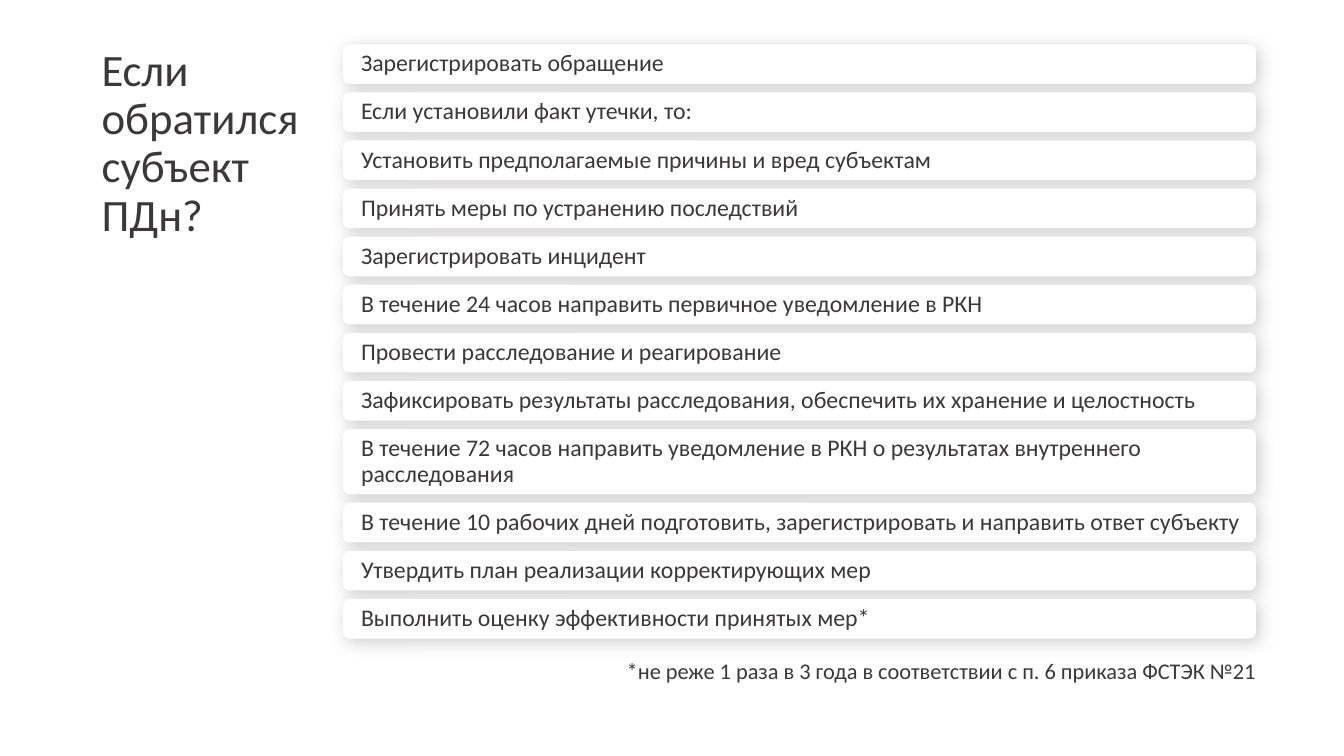
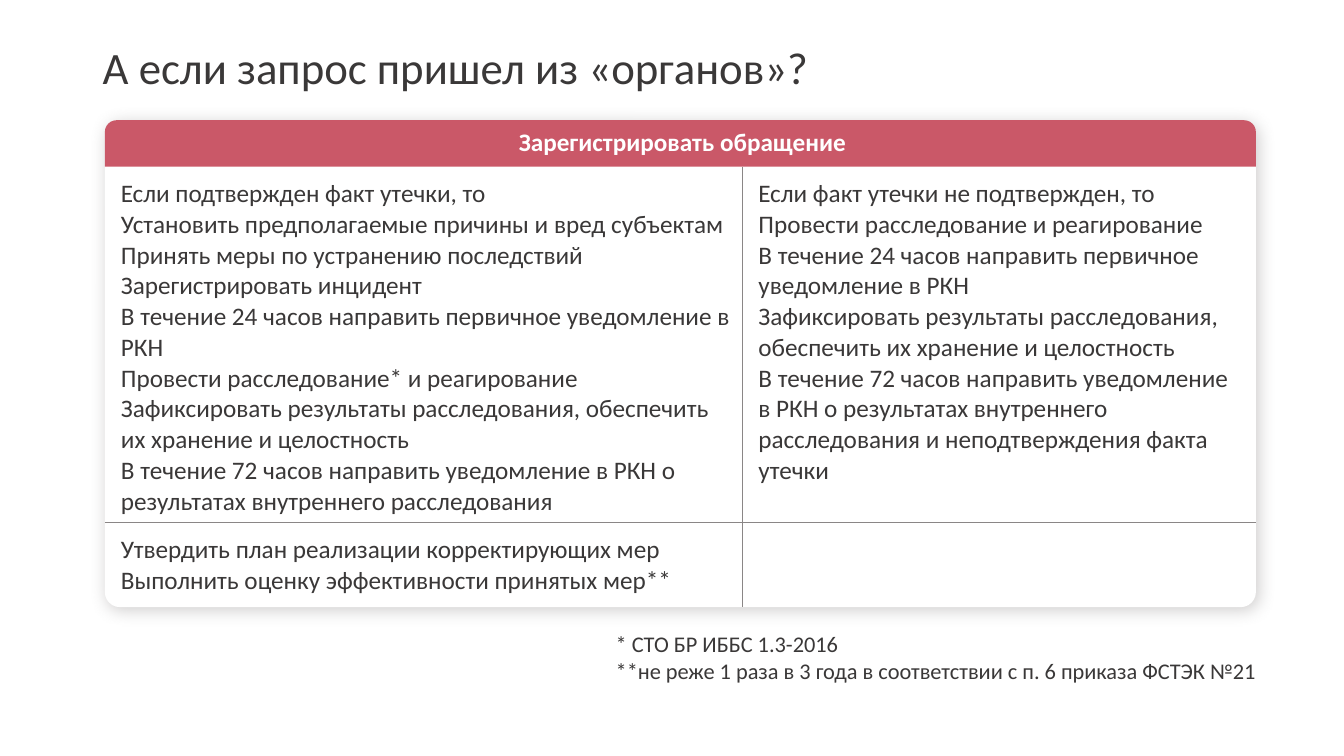
from lxml import etree
from pptx import Presentation
from pptx.dml import color
from pptx.enum import shapes, text
from pptx.oxml import ns
from pptx.util import Pt

DARK, WHITE, GREY, RED = "3A3838", "FFFFFF", "8A8686", "CA5868"
RIGHT = 897.1  # right edge of the content
FORM = shapes.MSO_SHAPE
MID, TOP = text.MSO_ANCHOR.MIDDLE, text.MSO_ANCHOR.TOP
PLAIN = "{2D5ABB26-0587-4C30-8999-92F81FD0307C}"  # no style, no grid


def rgb(hex_):
    return color.RGBColor.from_string(hex_)


def add(parent, tag, **attrs):
    node = etree.SubElement(parent, ns.qn(tag))
    for key, val in attrs.items():
        node.set(key, str(val))
    return node


class Deck:
    font = "Calibri"

    def __init__(self):
        self.prs = Presentation()
        self.prs.slide_width, self.prs.slide_height = Pt(960), Pt(540)
        self.slide = None

    def page(self):
        self.slide = self.prs.slides.add_slide(self.prs.slide_layouts[5])

    def label(self, frame, lines, size, hue=DARK, bold=False, align="LEFT", lead=None):
        frame.text = "\n".join(lines)
        for para in frame.paragraphs:
            para.alignment = text.PP_ALIGN[align]
            if lead:
                para.line_spacing = lead
            for run in para.runs:
                run.font.name, run.font.size = self.font, Pt(size)
                run.font.bold, run.font.color.rgb = bold, rgb(hue)

    def inset(self, box, left, top, right, low):
        box.margin_left, box.margin_top = Pt(left), Pt(top)
        box.margin_right, box.margin_bottom = Pt(right), Pt(low)

    def title(self, words, left, top, wide, high, anchor, pad):
        item = self.slide.shapes.title
        item.left, item.top = Pt(left), Pt(top)
        item.width, item.height = Pt(wide), Pt(high)
        frame = item.text_frame
        frame.word_wrap, frame.auto_size = True, text.MSO_AUTO_SIZE.NONE
        frame.vertical_anchor = anchor
        self.inset(frame, *pad)
        self.label(frame, [words], 32, lead=0.9)

    def panel(self, form, left, top, wide, high, fill, curve, shade=True):
        item = self.slide.shapes.add_shape(form, Pt(left), Pt(top), Pt(wide), Pt(high))
        item.adjustments[0] = curve / high
        item.fill.solid()
        item.fill.fore_color.rgb = rgb(fill)
        item.line.fill.background()
        item.shadow.inherit = False
        if shade:
            glow = item._element.spPr.find(ns.qn("a:effectLst"))
            drop = add(glow, "a:outerShdw", blurRad=Pt(12), dist=Pt(3),
                       dir=45 * 60000, algn="tl", rotWithShape=0)
            add(add(drop, "a:srgbClr", val=GREY), "a:alpha", val=40000)
        return item

    def card(self, words, left, top, wide, high):
        item = self.panel(FORM.ROUNDED_RECTANGLE, left, top, wide, high, WHITE, 4.7)
        frame = item.text_frame
        frame.word_wrap, frame.vertical_anchor = True, MID
        self.inset(frame, 11.5, 5.8, 5.8, 5.8)
        self.label(frame, [words], 17, lead=0.9)

    def note(self, lines, left):
        high = 19.5 * len(lines) + 7.2
        item = self.slide.shapes.add_textbox(
            Pt(left), Pt(492.7 - high), Pt(910 - left), Pt(high))
        item.text_frame.word_wrap = False
        self.label(item.text_frame, lines, 16)

    def table(self, left, top, cols, rows):
        item = self.slide.shapes.add_table(
            len(rows), len(cols), Pt(left), Pt(top), Pt(sum(cols)), Pt(sum(rows)))
        grid = item.table
        grid.first_row = grid.horz_banding = False
        grid._tbl.tblPr.find(ns.qn("a:tableStyleId")).text = PLAIN
        for col, wide in zip(grid.columns, cols):
            col.width = Pt(wide)
        for row, high in zip(grid.rows, rows):
            row.height = Pt(high)
        return grid

    def cell(self, cell, lines, edges="", pad=(11.5, 8.6, 8.6, 5), **look):
        self.inset(cell, *pad)
        props = cell._tc.get_or_add_tcPr()
        for edge in edges.split():
            line = add(props, "a:" + edge, w=Pt(0.75))
            add(add(line, "a:solidFill"), "a:srgbClr", val=GREY)
        cell.fill.background()
        if lines:
            self.label(cell.text_frame, lines, 18, **look)


FOUND = "Установить предполагаемые причины и вред субъектам"
FIX = "Принять меры по устранению последствий"
LOG = "Зарегистрировать инцидент"
DAY = "В течение 24 часов направить первичное уведомление в РКН"
PROBE = "Провести расследование и реагирование"
KEEP = "Зафиксировать результаты расследования, обеспечить их хранение и целостность"
LATE = "В течение 72 часов направить уведомление в РКН о результатах внутреннего расследования"
PLAN = "Утвердить план реализации корректирующих мер"
RATE = "Выполнить оценку эффективности принятых мер*"
ENTER = "Зарегистрировать обращение"
RULE = "*не реже 1 раза в 3 года в соответствии с п. 6 приказа ФСТЭК №21"


def subject(deck):
    deck.page()
    deck.title("Если обратился субъект ПДн?", 62.6, 23.8, 165.6, 453.6, TOP, [10] * 4)

    # Stack of steps
    steps = [ENTER, "Если установили факт утечки, то:", FOUND, FIX, LOG, DAY, PROBE,
             KEEP, LATE,
             "В течение 10 рабочих дней подготовить, зарегистрировать и направить ответ субъекту",
             PLAN, RATE]
    left, top, gap = 245, 31.7, 6.05
    for step in steps:
        high = 46.6 if step == LATE else 28.3
        deck.card(step, left, top, RIGHT - left, high)
        top += high + gap
    deck.note([RULE], 440.6)


def organs(deck):
    deck.page()
    left, top = 74.9, 85.9
    cols, rows = [RIGHT - left - 366.8, 366.8], [33.1, 254.2, 60.5]

    # Card and red band behind the table
    deck.panel(FORM.ROUNDED_RECTANGLE, left, top, sum(cols), sum(rows), WHITE, 10.8)
    deck.title("А если запрос пришел из «органов»?", 66.2, 28.8, 828, 42.5, MID,
               (7.2, 3.6, 7.2, 3.6))
    deck.note(["* СТО БР ИББС 1.3-2016", "*" + RULE], 432.7)
    deck.panel(FORM.ROUND_2_SAME_RECTANGLE, left, top, sum(cols), rows[0], RED, 8.4,
               shade=False)

    # Table
    grid = deck.table(left, top, cols, rows)
    grid.cell(0, 0).merge(grid.cell(0, 1))
    deck.cell(grid.cell(0, 0), [ENTER], pad=(11.5, 5.5, 8.6, 5.5),
              hue=WHITE, bold=True, align="CENTER")
    deck.cell(grid.cell(0, 1), [])
    leak = ["Если подтвержден факт утечки, то", FOUND, FIX, LOG, DAY,
            "Провести расследование* и реагирование", KEEP, LATE]
    clear = ["Если факт утечки не подтвержден, то", PROBE, DAY, KEEP,
             LATE + " и неподтверждения факта утечки"]
    deck.cell(grid.cell(1, 0), leak, "lnR lnB")
    deck.cell(grid.cell(1, 1), clear, "lnL lnB")
    deck.cell(grid.cell(2, 0), [PLAN, RATE + "*"], "lnR lnT")
    deck.cell(grid.cell(2, 1), [], "lnL lnT")


def main():
    deck = Deck()
    subject(deck)
    organs(deck)
    deck.prs.save("out.pptx")


if __name__ == "__main__":
    main()
